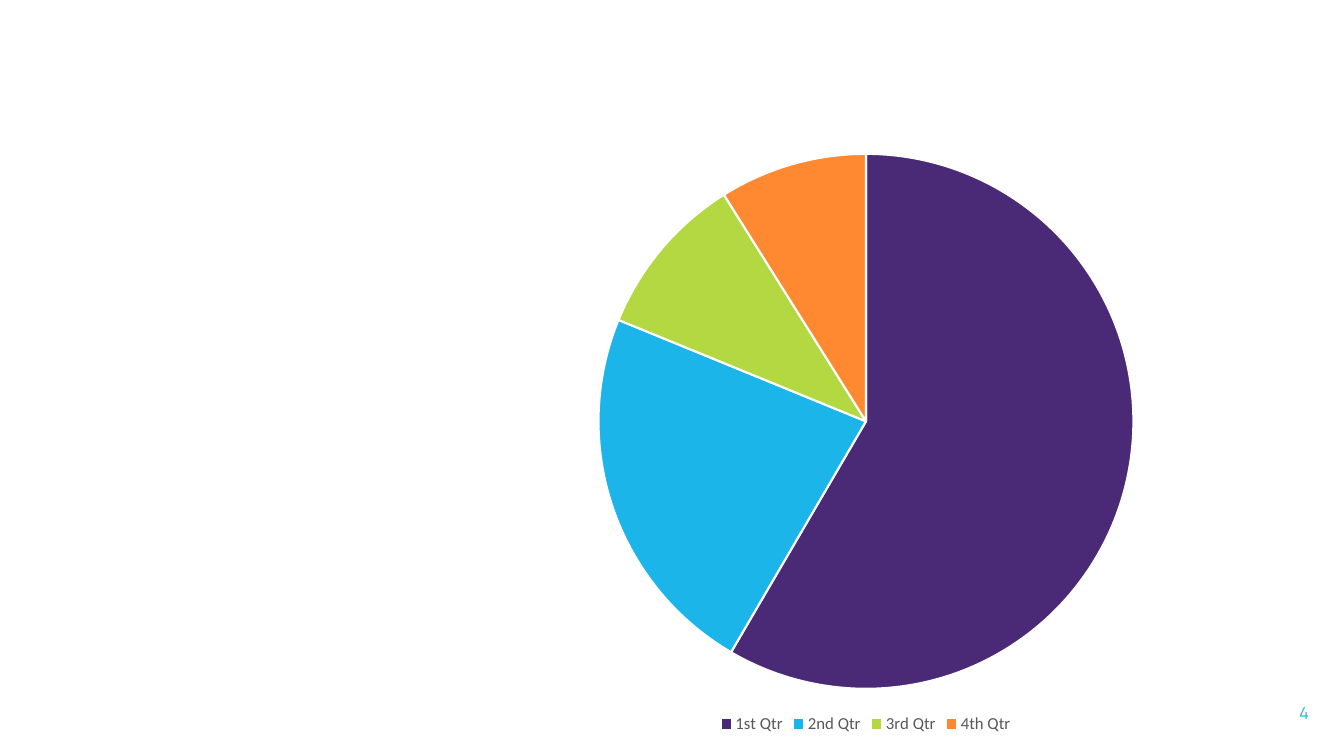
from pptx import Presentation
from pptx.chart.data import CategoryChartData
from pptx.dml.color import RGBColor
from pptx.enum.chart import XL_CHART_TYPE, XL_LEGEND_POSITION
from pptx.enum.text import MSO_ANCHOR, PP_ALIGN
from pptx.util import Emu, Pt

PIE = XL_CHART_TYPE.PIE
BOTTOM = XL_LEGEND_POSITION.BOTTOM
MIDDLE = MSO_ANCHOR.MIDDLE
RIGHT = PP_ALIGN.RIGHT

SCALE = 914400 / 100.8
COLORS = {
    "white": "FFFFFF",
    "violet": "4A2A76",
    "blue": "1CB5EA",
    "lime": "B4D841",
    "orange": "FF8931",
    "gray": "595959",
    "number": "23B5E9",
}
SALES = [
    ("1st Qtr", 59, "violet"),
    ("2nd Qtr", 23, "blue"),
    ("3rd Qtr", 10, "lime"),
    ("4th Qtr", 9, "orange"),
]


def px(length):
    return Emu(round(length * SCALE))


def color(name):
    return RGBColor.from_string(COLORS[name])


def style(font, face, size, hue):
    font.name = face
    font.size = Pt(size)
    font.color.rgb = color(hue)


def add_pie(slide, box):
    data = CategoryChartData()
    data.categories = [name for name, _, _ in SALES]
    data.add_series("Series 1", [value for _, value, _ in SALES])
    chart = slide.shapes.add_chart(PIE, *map(px, box), data).chart
    chart.has_title = False
    chart.font.name = "Calibri"
    chart.font.size = Pt(10)
    chart.has_legend = True
    chart.legend.position = BOTTOM
    chart.legend.include_in_layout = False
    style(chart.legend.font, "Calibri", 12, "gray")
    plot = chart.plots[0]
    plot.vary_by_categories = True
    for index, (_, _, hue) in enumerate(SALES):
        form = plot.series[0].points[index].format
        form.fill.solid()
        form.fill.fore_color.rgb = color(hue)
        form.line.color.rgb = color("white")
        form.line.width = Pt(1.5)


def add_number(slide, box, text):
    frame = slide.shapes.add_textbox(*map(px, box)).text_frame
    frame.word_wrap = True
    frame.vertical_anchor = MIDDLE
    line = frame.paragraphs[0]
    line.text = text
    line.alignment = RIGHT
    style(line.runs[0].font, "Manrope", 12, "number")


def main():
    deck = Presentation()
    deck.slide_width, deck.slide_height = px(1344), px(756)
    slide = deck.slides.add_slide(deck.slide_layouts[6])
    slide.background.fill.solid()
    slide.background.fill.fore_color.rgb = color("white")
    add_number(slide, (1117, 688, 202, 50), "4")
    add_pie(slide, (572, 140, 588, 598))
    deck.save("out.pptx")


if __name__ == "__main__":
    main()
